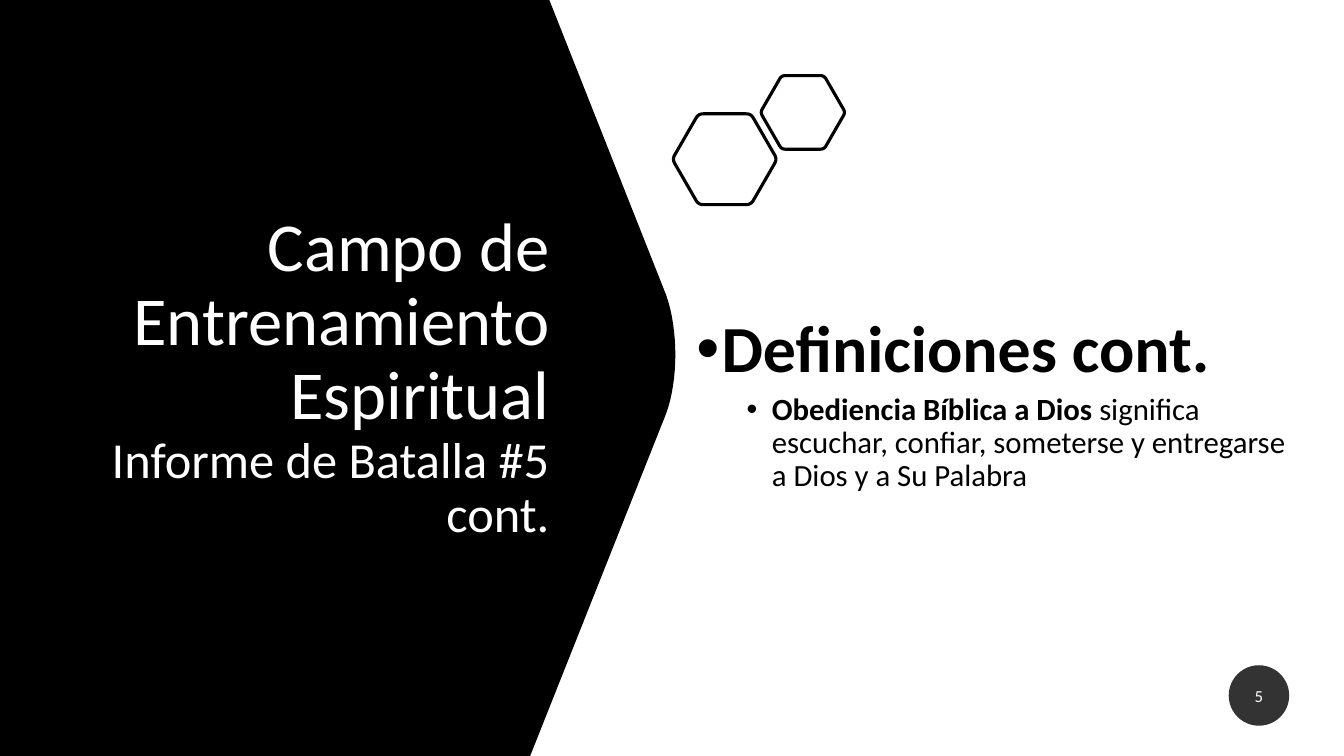
"""Builds a slide with a dark title panel, a bulleted definition and a page badge."""
from dataclasses import dataclass
from math import comb, cos, pi, sin

from lxml.etree import SubElement
from pptx import Presentation
from pptx.dml.color import RGBColor
from pptx.enum.shapes import MSO_SHAPE as Shape
from pptx.enum.text import MSO_ANCHOR as Anchor, PP_ALIGN as Align
from pptx.oxml.ns import qn
from pptx.util import Emu, Inches, Pt

COLORS = {"ink": "000000", "paper": "FFFFFF"}
FONT = "Calibri"
COLS, ROWS = 160, 90
CELL = Inches(13.3333333) // COLS

Point = tuple[float, float]


@dataclass
class Box:
    col: float
    row: float
    cols: float
    rows: float

    def emu(self) -> list[Emu]:
        return [cells(v) for v in (self.col, self.row, self.cols, self.rows)]


@dataclass
class Run:
    text: str
    size: float
    color: str = "ink"
    bold: bool = False
    break_after: bool = False


@dataclass
class Para:
    runs: list[Run]
    align: Align = Align.LEFT
    spacing: float = 0.9
    before: float = 0
    after: float = 0
    level: int = 0
    margin: float = 0
    bullet: bool = False


@dataclass
class Hexagon:
    col: float
    row: float
    radius: float


HEXAGONS = [Hexagon(86.28, 18.96, 6.24), Hexagon(95.58, 13.38, 5.06)]
CORNER = 0.09
BULLET_INDENT = 0.25

TITLE = [Para([
    Run("Campo de Entrenamiento Espiritual", 49, "paper", break_after=True),
    Run("Informe de Batalla #5 cont.", 36, "paper"),
], Align.RIGHT)]

BODY = [
    Para([Run("Definiciones cont.", 47, bold=True)], before=10, margin=0.25, bullet=True),
    Para([
        Run("Obediencia Bíblica a Dios ", 22, bold=True),
        Run("significa escuchar, confiar, someterse y entregarse a Dios y a Su Palabra", 22),
    ], before=5, level=1, margin=0.75, bullet=True),
]

PAGE = [Para([Run("5", 12, "paper")], Align.CENTER, spacing=1, after=6)]


def cells(count: float) -> Emu:
    return Emu(round(count * CELL))


def rgb(name: str) -> RGBColor:
    return RGBColor.from_string(COLORS[name])


def bezier(controls: list[Point], steps: int = 16) -> list[Point]:
    n = len(controls) - 1

    def at(t: float, axis: int) -> float:
        return sum(comb(n, i) * (1 - t) ** (n - i) * t ** i * c[axis]
                   for i, c in enumerate(controls))

    return [(at(s / steps, 0), at(s / steps, 1)) for s in range(steps + 1)]


def toward(a: Point, b: Point, share: float) -> Point:
    return a[0] + (b[0] - a[0]) * share, a[1] + (b[1] - a[1]) * share


def hexagon_outline(h: Hexagon) -> list[Point]:
    tips = [(h.col + h.radius * cos(k * pi / 3), h.row + h.radius * sin(k * pi / 3))
            for k in range(6)]
    points = []
    for k, tip in enumerate(tips):
        start = toward(tip, tips[k - 1], CORNER)
        end = toward(tip, tips[(k + 1) % 6], CORNER)
        points += bezier([start, tip, end], 6)
    return points


def panel_outline() -> list[Point]:
    bulge = bezier([(79.32, 35.16), (80.76, 39.24), (80.76, 45.24), (79.32, 49.2)])
    return [(0, 0), (65.4, 0), *bulge, (63.12, ROWS), (0, ROWS)]


def add_outline(shapes, points: list[Point], filled: bool) -> None:
    emu = [(cells(x), cells(y)) for x, y in points]
    fb = shapes.build_freeform(*emu[0])
    fb.add_line_segments(emu[1:], close=True)
    sp = fb.convert_to_shape()
    sp.shadow.inherit = False
    if filled:
        sp.fill.solid()
        sp.fill.fore_color.rgb = rgb("ink")
        sp.line.fill.background()
    else:
        sp.fill.background()
        sp.line.color.rgb = rgb("ink")
        sp.line.width = Pt(2.25)


def write(tf, paras: list[Para]) -> None:
    tf.word_wrap = True
    tf.vertical_anchor = Anchor.MIDDLE
    for i, para in enumerate(paras):
        p = tf.add_paragraph() if i else tf.paragraphs[0]
        p.alignment, p.level, p.line_spacing = para.align, para.level, para.spacing
        p.space_before, p.space_after = Pt(para.before), Pt(para.after)
        if para.bullet:
            ppr = p._p.get_or_add_pPr()
            ppr.set("marL", str(Inches(para.margin)))
            ppr.set("indent", str(-Inches(BULLET_INDENT)))
            SubElement(ppr, qn("a:buFont")).set("typeface", "Arial")
            SubElement(ppr, qn("a:buChar")).set("char", "•")
        for run in para.runs:
            r = p.add_run()
            r.text = run.text
            r.font.name, r.font.size, r.font.bold = FONT, Pt(run.size), run.bold
            r.font.color.rgb = rgb(run.color)
            if run.break_after:
                p.add_line_break()


def add_text(shapes, box: Box, paras: list[Para]) -> None:
    write(shapes.add_textbox(*box.emu()).text_frame, paras)


def add_badge(shapes, box: Box, paras: list[Para]) -> None:
    sp = shapes.add_shape(Shape.OVAL, *box.emu())
    sp.shadow.inherit = False
    sp.fill.solid()
    sp.fill.fore_color.rgb = rgb("ink")
    color = sp.fill._xPr.find(qn("a:solidFill"))[0]
    SubElement(color, qn("a:alpha")).set("val", "80000")
    sp.line.fill.background()
    write(sp.text_frame, paras)


def main() -> None:
    prs = Presentation()
    prs.slide_width, prs.slide_height = cells(COLS), cells(ROWS)
    slide = prs.slides.add_slide(prs.slide_layouts[6])
    slide.background.fill.solid()
    slide.background.fill.fore_color.rgb = rgb("paper")
    shapes = slide.shapes
    add_outline(shapes, panel_outline(), filled=True)
    add_text(shapes, Box(10.08, 16.92, 56.52, 56.16), TITLE)
    for h in HEXAGONS:
        add_outline(shapes, hexagon_outline(h), filled=False)
    add_text(shapes, Box(81.72, 28.92, 74.04, 38.5), BODY)
    add_badge(shapes, Box(146.28, 79.2, 7.2, 7.2), PAGE)
    prs.save("out.pptx")


if __name__ == "__main__":
    main()
